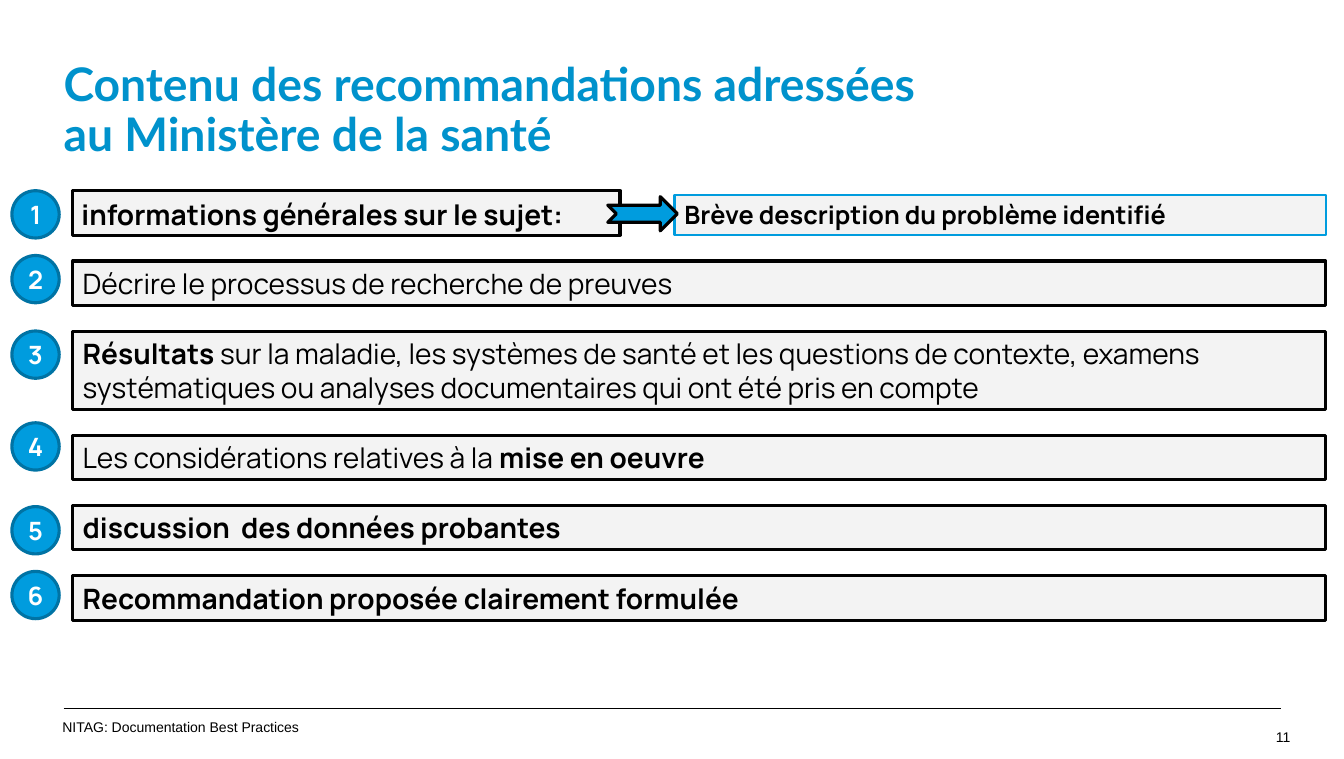
from pptx import Presentation
from pptx.dml.color import RGBColor
from pptx.enum.shapes import MSO_CONNECTOR, MSO_SHAPE
from pptx.enum.text import MSO_ANCHOR, PP_ALIGN
from pptx.oxml.ns import qn
from pptx.util import Cm, Pt
from lxml.etree import SubElement

BLUE = "009CDE"
BLACK = "000000"
GREY = "F3F3F3"

ROW_LEFT, ROW_TOP, ROW_WIDTH, ROW_GAP = 1.83, 4.8, 31.52, 0.65
TOPIC_WIDTH = 13.77
BADGE_LEFT, BADGE_SIZE = 0.3, 1.19
ONE_LINE, TWO_LINES = 1.12, 1.96

ROWS = [
    (4.8, ONE_LINE, [("informations générales sur le sujet:", True)]),
    (6.43, ONE_LINE, [("Décrire le processus de recherche de preuves", False)]),
    (8.33, TWO_LINES, [
        ("Résultats ", True),
        ("sur la maladie, les systèmes de santé et les questions de contexte, "
         "examens systématiques ou analyses documentaires qui ont été pris en compte", False),
    ]),
    (10.64, ONE_LINE, [("Les considérations relatives à la ", False), ("mise en oeuvre", True)]),
    (12.75, ONE_LINE, [("discussion  des données probantes", True)]),
    (14.38, ONE_LINE, [("Recommandation proposée clairement formulée", True)]),
]


def color(value):
    return RGBColor.from_string(value)


def set_font(font, name, size, value, bold=None):
    font.name = name
    font.size = Pt(size)
    font.color.rgb = color(value)
    font.bold = bold


def set_margins(frame, left, top, right, bottom):
    frame.margin_left, frame.margin_top = Cm(left), Cm(top)
    frame.margin_right, frame.margin_bottom = Cm(right), Cm(bottom)


def add_text(slide, box, lines, name, size, value, bold=None,
             alignment=PP_ALIGN.LEFT, spacing=1.0, margins=(0, 0, 0, 0)):
    frame = slide.shapes.add_textbox(*map(Cm, box)).text_frame
    frame.word_wrap = True
    set_margins(frame, *margins)
    frame.text = "\n".join(lines)
    for paragraph in frame.paragraphs:
        paragraph.alignment = alignment
        paragraph.line_spacing = spacing
        set_font(paragraph.font, name, size, value, bold)


def add_figure(slide, kind, box, fill, line, width=2.25):
    shape = slide.shapes.add_shape(kind, *map(Cm, box))
    shape.shadow.inherit = False
    shape.fill.solid()
    shape.fill.fore_color.rgb = color(fill)
    shape.line.color.rgb = color(line)
    shape.line.width = Pt(width)
    return shape


def write_runs(shape, runs, size, value=BLACK, alignment=PP_ALIGN.LEFT, anchor=MSO_ANCHOR.MIDDLE):
    frame = shape.text_frame
    frame.word_wrap = True
    frame.vertical_anchor = anchor
    paragraph = frame.paragraphs[0]
    paragraph.alignment = alignment
    set_font(paragraph.font, "Manrope", size, value)
    for text, bold in runs:
        run = paragraph.add_run()
        run.text = text
        run.font.bold = bold
    return frame


def add_row(slide, top, width, height, runs):
    shape = add_figure(slide, MSO_SHAPE.RECTANGLE, (ROW_LEFT, top, width, height), GREY, BLACK)
    return write_runs(shape, runs, 20)


def add_badge(slide, top, number):
    shape = add_figure(slide, MSO_SHAPE.OVAL, (BADGE_LEFT, top, BADGE_SIZE, BADGE_SIZE), BLUE, "0073A4")
    frame = write_runs(shape, [(str(number), True)], 18, "FFFFFF", PP_ALIGN.CENTER)
    set_margins(frame, 0, 0, 0, 0)


def add_rule(slide, left, right, top):
    connector = slide.shapes.add_connector(MSO_CONNECTOR.STRAIGHT, Cm(left), Cm(top), Cm(right), Cm(top))
    connector.line.color.rgb = color(BLACK)
    connector.line.width = Pt(0.75)
    SubElement(connector.element.spPr, qn("a:effectLst"))


def add_rows(slide):
    top = ROW_TOP
    for number, (badge_top, height, runs) in enumerate(ROWS, 1):
        frame = add_row(slide, top, TOPIC_WIDTH if number == 1 else ROW_WIDTH, height, runs)
        if number == 1:
            set_margins(frame, 0.22, 0, 0.05, 0)
            frame.paragraphs[0].line_spacing = 1.1
        add_badge(slide, badge_top, number)
        top += height + ROW_GAP


def main():
    presentation = Presentation()
    presentation.slide_width, presentation.slide_height = Cm(33.81), Cm(19.1)
    slide = presentation.slides.add_slide(presentation.slide_layouts[6])

    add_text(slide, (1.6, 1.52, 30.53, 2.57),
             ["Contenu des recommandations adressées", "au Ministère de la santé"],
             "Lato", 33, "0092CC", True, spacing=0.9, margins=(0, 0.03, 0, 0))
    callout = add_figure(slide, MSO_SHAPE.RECTANGLE, (16.97, 4.9, 16.38, 1.02), GREY, BLUE, 1.5)
    write_runs(callout, [("Brève description du problème identifié", True)], 18, anchor=MSO_ANCHOR.TOP)
    add_rows(slide)
    add_figure(slide, MSO_SHAPE.NOTCHED_RIGHT_ARROW, (15.29, 4.95, 1.75, 0.86), BLUE, BLACK)

    add_rule(slide, 1.6, 32.22, 17.83)
    add_text(slide, (1.32, 17.96, 9.78, 0.64), ["NITAG: Documentation Best Practices"],
             "Arial", 10, BLACK, margins=(0.25, 0.13, 0.25, 0.13))
    add_text(slide, (31.65, 18.34, 0.81, 0.51), ["11"], "Arial", 10, BLACK, alignment=PP_ALIGN.RIGHT)
    presentation.save("out.pptx")


if __name__ == "__main__":
    main()
